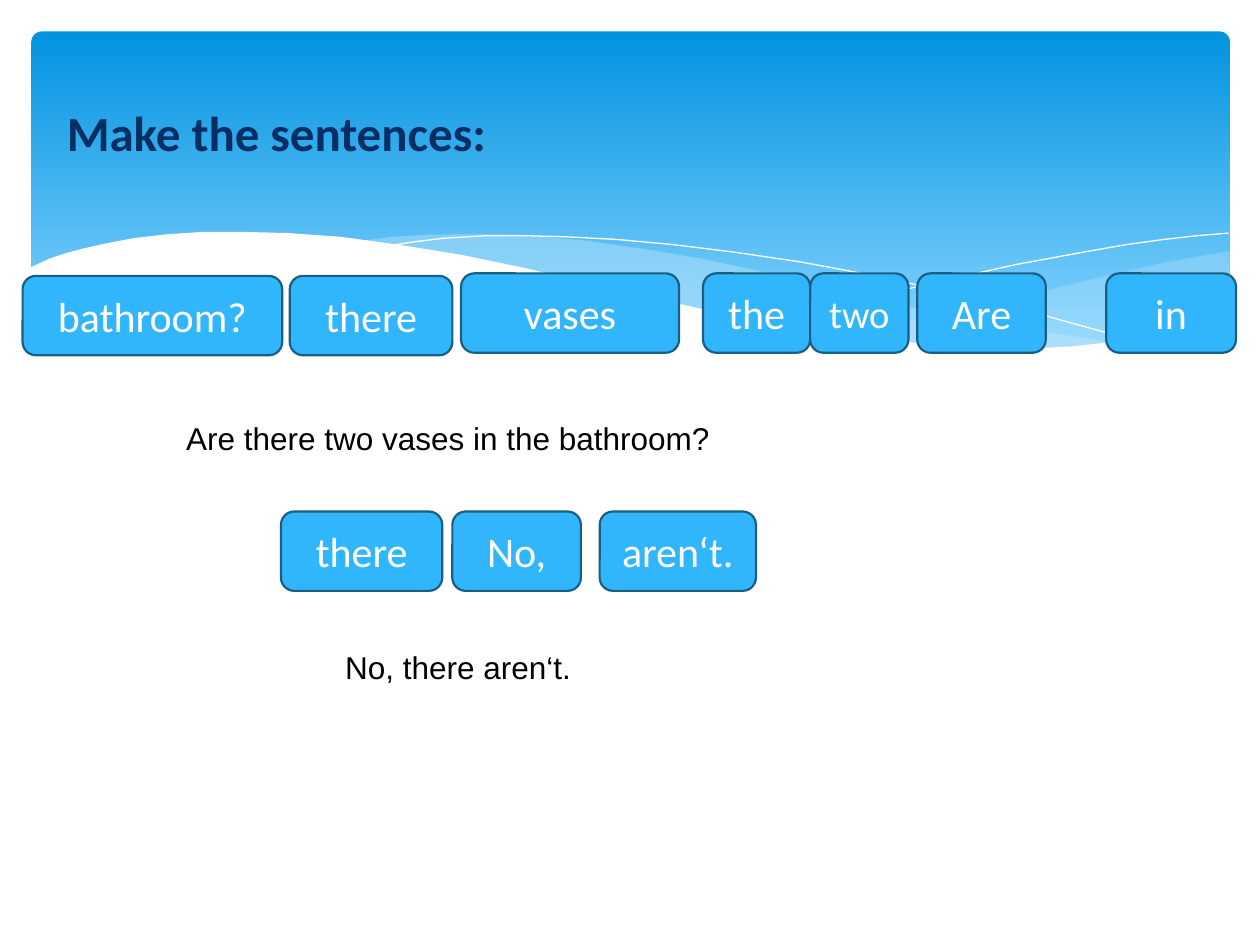
from lxml.etree import SubElement
from pptx import Presentation
from pptx.dml.color import RGBColor as RGB
from pptx.enum.shapes import MSO_SHAPE as Kind
from pptx.enum.text import MSO_ANCHOR as Anchor, MSO_AUTO_SIZE as Auto, PP_ALIGN as Align
from pptx.oxml.ns import qn
from pptx.util import Inches, Pt

HUES = {"top": "0293E0", "low": "83D3FE", "wave": "C6E7FC", "card": "31B6FD",
        "edge": "195F84", "head": "052E65", "white": "FFFFFF", "black": "000000"}
INK = {name: RGB.from_string(code) for name, code in HUES.items()}

deck = Presentation()
deck.slide_width, deck.slide_height = Inches(10), Inches(7.5)
# The slide is a grid of 1000 columns by 750 rows
col, row = deck.slide_width // 1000, deck.slide_height // 750
slide = deck.slides.add_slide(deck.slide_layouts[5])
shapes = slide.shapes


def write(shape, text, font, size, ink, bold=False):
    part = shape.text_frame.paragraphs[0]
    run = part.add_run()
    run.text = text
    run.font.name, run.font.size, run.font.bold = font, Pt(size), bold
    run.font.color.rgb = INK[ink]
    return part


# Banner
band = shapes.add_shape(Kind.ROUNDED_RECTANGLE, 25 * col, 25 * row, 951 * col, 270 * row)
band.adjustments[0] = 0.03
band.shadow.inherit = False
band.line.fill.background()
band.fill.gradient()
band.fill.gradient_angle = 270
for stop, hue, spot in zip(band.fill.gradient_stops, ("top", "low"), (0, 0.9)):
    stop.color.rgb, stop.position = INK[hue], spot

# Waves: fill, opacity in percent (None for a bare line), points on the grid
waves = [
    ("wave", 29, [
        (976, 199), (948, 204), (921, 209), (891, 216), (861, 223), (805, 237),
        (753, 248), (706, 257), (661, 265), (691, 269), (718, 271), (745, 275),
        (769, 277), (803, 278), (835, 277), (863, 275), (889, 272), (913, 267),
        (935, 261), (963, 252), (976, 247)]),
    ("wave", 40, [
        (893, 273), (866, 269), (807, 260), (741, 248), (668, 231), (598, 214),
        (555, 205), (514, 198), (465, 191), (420, 187), (380, 186), (344, 186),
        (313, 188), (286, 191), (323, 196), (362, 203), (404, 211), (449, 222),
        (530, 240), (601, 255), (650, 264), (695, 270), (736, 275), (773, 277),
        (807, 278), (838, 278), (867, 276), (893, 273)]),
    ("white", None, [
        (309, 195), (328, 192), (353, 189), (387, 187), (416, 187), (450, 188),
        (489, 190), (533, 194), (582, 200), (636, 208), (695, 219), (760, 233),
        (831, 251), (907, 272)]),
    ("white", None, [
        (613, 257), (652, 246), (695, 235), (748, 223), (806, 210), (866, 199),
        (895, 194), (924, 190), (951, 187), (975, 185)]),
    ("white", 100, [
        (977, 246), (950, 256), (920, 265), (887, 271), (850, 275), (809, 277),
        (778, 276), (744, 274), (708, 270), (668, 265), (626, 258), (579, 250),
        (529, 239), (475, 227), (418, 213), (365, 202), (315, 194), (271, 188),
        (230, 185), (193, 184), (161, 184), (132, 186), (106, 189), (85, 193),
        (67, 197), (52, 201), (40, 205), (29, 210), (23, 213), (23, 329), (977, 329)]),
]
for hue, share, points in waves:
    pen = shapes.build_freeform(*points[0], scale=(col, row))
    pen.add_line_segments(points[1:], close=share is not None)
    wave = pen.convert_to_shape()
    wave.shadow.inherit = False
    if share is None:
        wave.fill.background()
        wave.line.color.rgb, wave.line.width = INK[hue], Pt(0)
        continue
    wave.line.fill.background()
    wave.fill.solid()
    wave.fill.fore_color.rgb = INK[hue]
    if share < 100:
        tint = wave.element.spPr.find(".//" + qn("a:srgbClr"))
        SubElement(tint, qn("a:alpha"), val=str(share * 1000))

# Word cards: text, left, top, width
cards = [
    ("bathroom?", 18, 219, 206), ("there", 230, 219, 129), ("vases", 366, 217, 173),
    ("the", 558, 217, 85), ("two", 643, 217, 78), ("Are", 728, 217, 102),
    ("in", 878, 217, 103),
    ("there", 223, 406, 128), ("No,", 359, 406, 102), ("aren‘t.", 476, 406, 124),
]
for text, left, top, wide in cards:
    card = shapes.add_shape(Kind.ROUNDED_RECTANGLE, left * col, top * row, wide * col, 63 * row)
    card.shadow.inherit = False
    card.fill.solid()
    card.fill.fore_color.rgb = INK["card"]
    card.line.color.rgb, card.line.width = INK["edge"], Pt(1.25)
    card.text_frame.vertical_anchor = Anchor.MIDDLE
    size = 22 if text == "two" else 24
    write(card, text, "Calibri", size, "white").alignment = Align.CENTER

# Title, in front of the banner
title = shapes.title
title.left, title.top, title.width, title.height = 43 * col, 76 * row, 362 * col, 57 * row
title.text_frame.word_wrap = False
title.text_frame.auto_size = Auto.NONE
title.text_frame.vertical_anchor = Anchor.TOP
write(title, "Make the sentences:", "Calibri", 28, "head", True).alignment = Align.LEFT
title.element.getparent().append(title.element)

# Answers
for text, left, top, wide in [
    ("Are there two vases in the bathroom?", 138, 328, 677),
    ("No, there aren‘t.", 264, 509, 228),
]:
    box = shapes.add_textbox(left * col, top * row, wide * col, 40 * row)
    box.text_frame.word_wrap = True
    write(box, text, "Arial", 18, "black")

deck.save("out.pptx")
